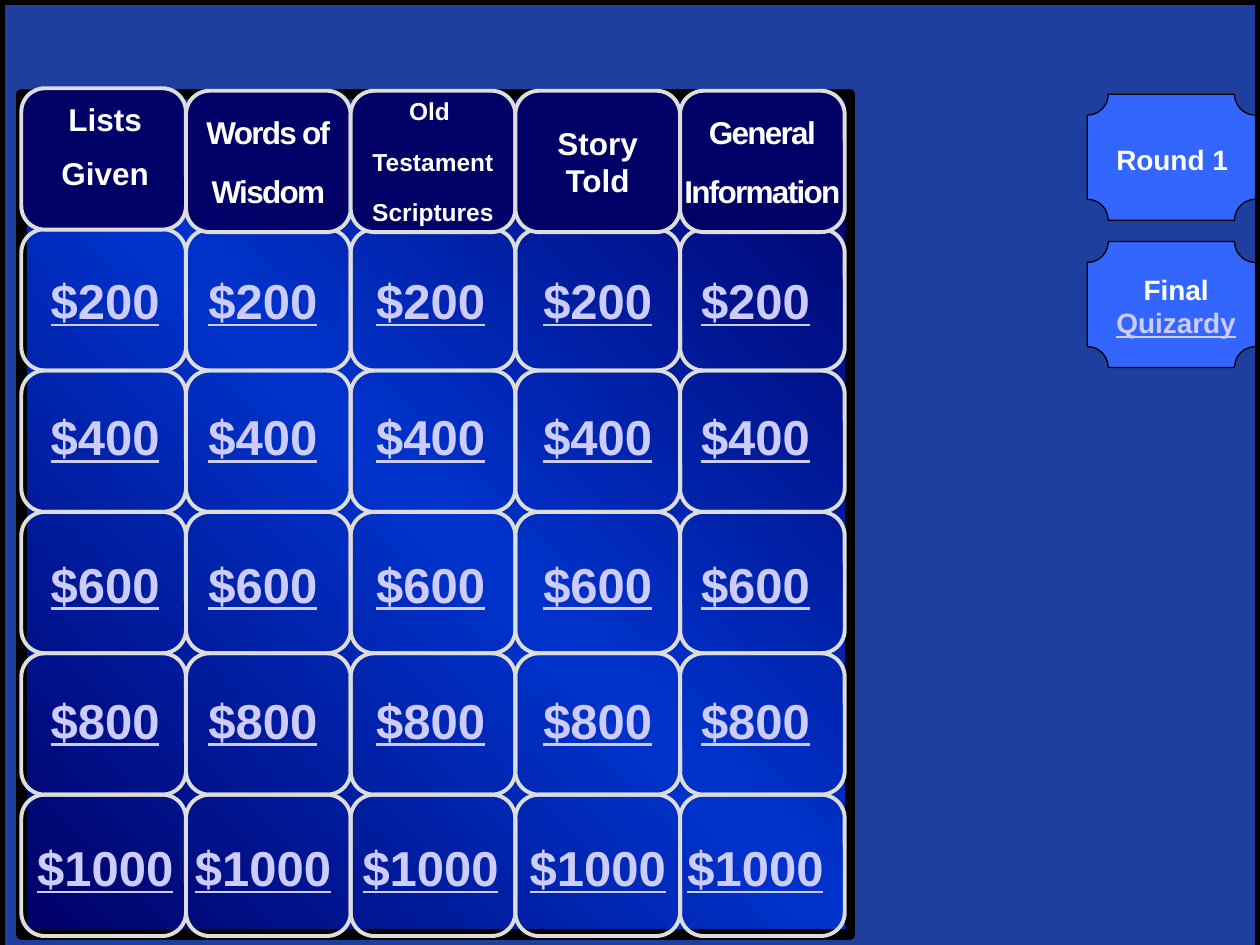
"""Build a quiz board slide with five categories and five prize rows."""
from copy import deepcopy
from dataclasses import dataclass

from lxml import etree
from pptx import Presentation
from pptx import util as u
from pptx.dml.color import RGBColor
from pptx.enum import shapes, text
from pptx.oxml.ns import qn


@dataclass(frozen=True)
class Theme:
    font: str = "Arial"
    black: str = "000000"
    navy: str = "000066"
    royal: str = "0033CC"
    blue: str = "3366FF"
    border: str = "DDDDDD"
    white: str = "FFFFFF"
    link: str = "CCCCFF"
    prize_size: int = 28
    heading_size: int = 18
    small_heading_size: int = 14
    button_size: int = 16


def add_run(paragraph, content, *, font, size, color, underline=False, spacing=None):
    run = paragraph.add_run()
    run.text = content
    run.font.name = font
    run.font.size = u.Pt(size)
    run.font.bold = True
    run.font.underline = underline
    run.font.color.rgb = RGBColor.from_string(color)
    if spacing is not None:
        run.font._element.set("spc", str(spacing * 100))


class Board:
    def __init__(self, slide, theme):
        self.slide = slide
        self.theme = theme

    def panel(self, kind, box, line, width, fill=None, alpha=None):
        shape = self.slide.shapes.add_shape(kind, *map(u.Cm, box))
        shape.shadow.inherit = False
        shape.line.color.rgb = RGBColor.from_string(line)
        shape.line.width = u.Pt(width)
        if fill is None:
            shape.fill.background()
        else:
            shape.fill.solid()
            shape.fill.fore_color.rgb = RGBColor.from_string(fill)
        if alpha is not None:
            color = shape._element.spPr.find(qn("a:solidFill"))[0]
            etree.SubElement(color, qn("a:alpha")).set("val", str(alpha * 1000))
        return shape

    def gradient_panel(self, box, colors, angle):
        shape = self.panel(shapes.MSO_SHAPE.RECTANGLE, box, self.theme.black, 6)
        shape.fill.gradient()
        shape.fill.gradient_angle = angle
        stop_list = shape._element.spPr.find(qn("a:gradFill")).find(qn("a:gsLst"))
        stop_list.append(deepcopy(stop_list[0]))
        for index, (stop, color) in enumerate(zip(shape.fill.gradient_stops, colors)):
            stop.position = index / (len(colors) - 1)
            stop.color.rgb = RGBColor.from_string(color)

    def cell(self, box, fill=None):
        return self.panel(shapes.MSO_SHAPE.ROUNDED_RECTANGLE, box, self.theme.border, 2.25, fill)

    def heading(self, box, lines, size, spacing=None, space_after=0):
        frame = self.cell(box, self.theme.navy).text_frame
        frame.word_wrap = False
        frame.vertical_anchor = text.MSO_ANCHOR.MIDDLE
        for index, line in enumerate(lines):
            paragraph = frame.add_paragraph() if index else frame.paragraphs[0]
            paragraph.alignment = text.PP_ALIGN.CENTER
            paragraph.space_after = u.Pt(space_after)
            add_run(paragraph, line, font=self.theme.font, size=size,
                    color=self.theme.white, spacing=spacing)

    def label(self, box, paragraphs, size):
        frame = self.slide.shapes.add_textbox(*map(u.Cm, box)).text_frame
        frame.word_wrap = True
        frame.auto_size = text.MSO_AUTO_SIZE.SHAPE_TO_FIT_TEXT
        for index, runs in enumerate(paragraphs):
            paragraph = frame.add_paragraph() if index else frame.paragraphs[0]
            paragraph.alignment = text.PP_ALIGN.CENTER
            space = etree.SubElement(paragraph._p.get_or_add_pPr(), qn("a:spcBef"))
            etree.SubElement(space, qn("a:spcPct")).set("val", "50000")
            for content, linked in runs:
                color = self.theme.link if linked else self.theme.white
                add_run(paragraph, content, font=self.theme.font, size=size,
                        color=color, underline=linked)

    def button(self, top, label_box, runs):
        self.panel(shapes.MSO_SHAPE.PLAQUE, (21.92, top, 3.39, 2.54),
                   self.theme.black, 0.75, self.theme.blue)
        self.label(label_box, [runs], self.theme.button_size)


def main():
    theme = Theme()
    presentation = Presentation()
    presentation.slide_width, presentation.slide_height = u.Cm(25.4), u.Cm(19.05)
    board = Board(presentation.slides.add_slide(presentation.slide_layouts[6]), theme)

    rectangle = shapes.MSO_SHAPE.RECTANGLE
    board.panel(rectangle, (0, 0, 25.4, 19.05), theme.black, 0.75, theme.black)
    board.panel(rectangle, (0, 0, 25.4, 19.25), theme.black, 6, theme.blue, alpha=62)
    board.gradient_panel((0.43, 1.9, 16.71, 16.94), (theme.navy, theme.royal, theme.navy), 45)

    cell_width, cell_height = 3.32, 2.85
    columns = [0.43 + cell_width * index for index in range(5)]
    rows = [4.62 + cell_height * index for index in range(5)]
    for left in columns:
        for top in rows:
            board.cell((left, top, cell_width, cell_height))

    board.cell((columns[0], 1.78, cell_width, cell_height), theme.navy)
    tight = {"size": theme.heading_size, "spacing": -1, "space_after": 12}
    headings = [
        (["Words of", "Wisdom"], tight),
        (["Old ", "Testament", "Scriptures"],
         {"size": theme.small_heading_size, "space_after": 12}),
        (["Story", "Told"], {"size": theme.heading_size}),
        (["General", "Information"], tight),
    ]
    for left, (lines, style) in zip(columns[1:], headings):
        board.heading((left, 1.83, cell_width, cell_height), lines, **style)
    board.label((0.64, 1.9, 2.96, 2.18), [[("Lists", False)], [("Given", False)]],
                theme.heading_size)

    prize_lefts = (0.43, 3.61, 6.99, 10.36, 13.54)
    prize_tops = (5.33, 8.08, 11.05, 13.79, 16.76)
    for row, top in enumerate(prize_tops, start=1):
        for left in prize_lefts:
            board.label((left, top, 3.38, 1.45), [[(f"${row * 200}", True)]], theme.prize_size)

    board.button(1.9, (21.89, 2.74, 3.48, 0.94), [("Round 1", False)])
    board.button(4.87, (22.12, 5.36, 3.18, 1.63), [("Final ", False), ("Quizardy", True)])

    presentation.save("out.pptx")


if __name__ == "__main__":
    main()
